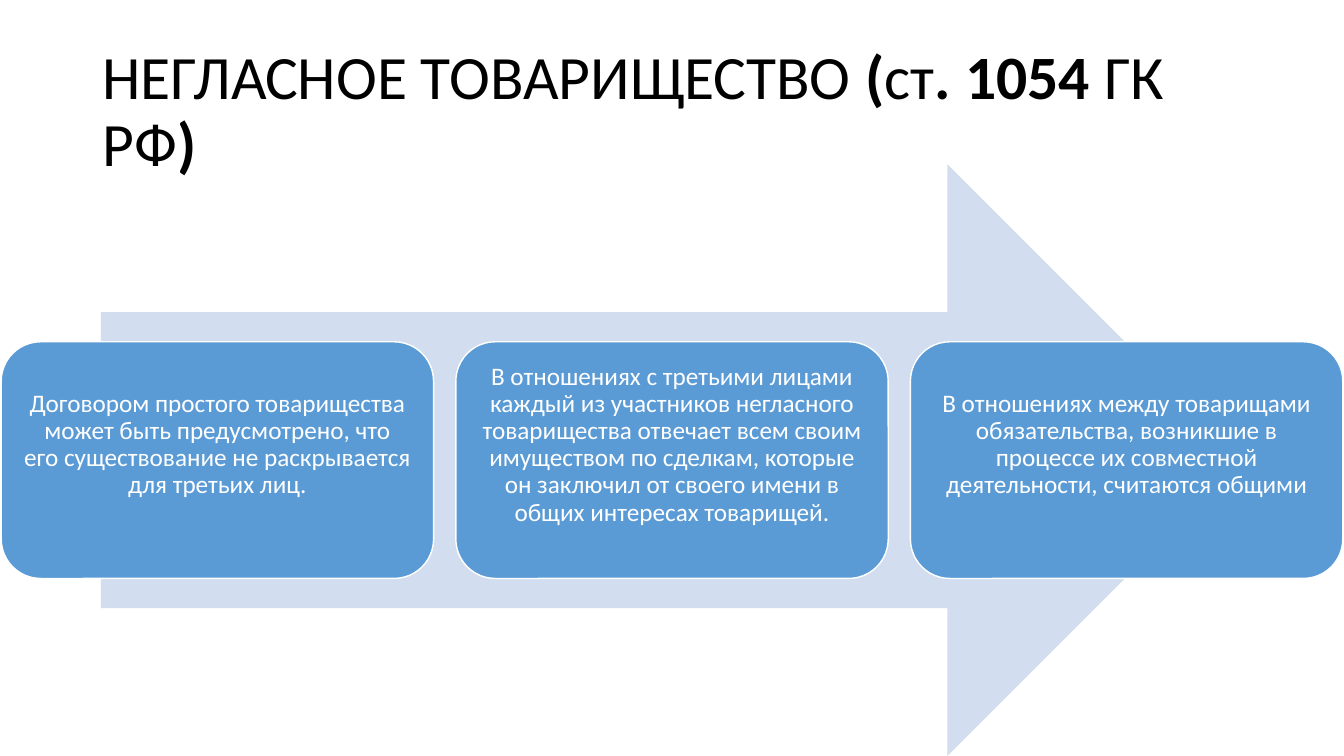
import pptx
import pptx.dml.color
import pptx.enum.shapes
import pptx.enum.text
import pptx.util

Cm = pptx.util.Cm
FONT = "Calibri"
HEADING = [
    ("НЕГЛАСНОЕ ТОВАРИЩЕСТВО ", False),
    ("(", True),
    ("ст", False),
    (". 1054 ", True),
    ("ГК РФ", False),
    (")", True),
]
RULES = [
    ["Договором простого товарищества может быть предусмотрено, что",
     "его существование не раскрывается для третьих лиц."],
    ["В отношениях с третьими лицами каждый из участников негласного",
     "товарищества отвечает всем своим имуществом по сделкам, которые",
     "он заключил от своего имени в общих интересах товарищей."],
    ["В отношениях между товарищами обязательства, возникшие в процессе "
     "их совместной деятельности, считаются общими"],
]


def colour(hex_code):
    """Return the colour for a hex string."""
    return pptx.dml.color.RGBColor.from_string(hex_code)


def add_run(paragraph, text, size, hex_code, bold=False):
    """Add one formatted run to a paragraph."""
    run = paragraph.add_run()
    run.text = text
    run.font.name = FONT
    run.font.size = pptx.util.Pt(size)
    run.font.bold = bold
    run.font.color.rgb = colour(hex_code)


def add_filled(slide, preset, left, top, width, height, hex_code):
    """Add a flat preset shape, measured in centimetres."""
    shape = slide.shapes.add_shape(preset, Cm(left), Cm(top), Cm(width), Cm(height))
    shape.shadow.inherit = False
    shape.fill.solid()
    shape.fill.fore_color.rgb = colour(hex_code)
    shape.line.fill.background()
    return shape


def place_heading(slide, left, top, width, height):
    """Place the title and write its plain and bold parts."""
    heading = slide.shapes.title
    heading.left, heading.top = Cm(left), Cm(top)
    heading.width, heading.height = Cm(width), Cm(height)
    frame = heading.text_frame
    frame.word_wrap = True
    frame.auto_size = pptx.enum.text.MSO_AUTO_SIZE.NONE
    frame.vertical_anchor = pptx.enum.text.MSO_ANCHOR.MIDDLE
    paragraph = frame.paragraphs[0]
    paragraph.alignment = pptx.enum.text.PP_ALIGN.LEFT
    paragraph.line_spacing = 0.9
    paragraph.space_before = pptx.util.Pt(0)
    for text, bold in HEADING:
        add_run(paragraph, text, 44, "000000", bold)


def place_rule(slide, lines, left, top, width, height):
    """Place one rounded box holding a rule of the partnership."""
    rule = add_filled(slide, pptx.enum.shapes.MSO_SHAPE.ROUNDED_RECTANGLE,
                      left, top, width, height, "5B9BD5")
    rule.line.color.rgb = colour("FFFFFF")
    rule.line.width = pptx.util.Pt(1)
    frame = rule.text_frame
    frame.word_wrap = True
    frame.vertical_anchor = pptx.enum.text.MSO_ANCHOR.MIDDLE
    frame.margin_left = frame.margin_right = Cm(0.18)
    frame.margin_top = frame.margin_bottom = Cm(0.18)
    paragraph = frame.paragraphs[0]
    paragraph.alignment = pptx.enum.text.PP_ALIGN.CENTER
    paragraph.line_spacing = 0.9
    paragraph.font.size = pptx.util.Pt(18)
    for line in lines:
        add_run(paragraph, line, 18, "FFFFFF")
        paragraph.add_line_break()


def place_process(slide, left, top, width, height):
    """Place the wide arrow with the row of rules across its middle."""
    inset, gap = 2.51, 0.56
    add_filled(slide, pptx.enum.shapes.MSO_SHAPE.RIGHT_ARROW,
               left + inset, top, width - 2 * inset, height, "D2DEEF")
    rule_width = (width - gap * (len(RULES) - 1)) / len(RULES)
    rule_height = height * 0.4
    for index, lines in enumerate(RULES):
        place_rule(slide, lines, left + index * (rule_width + gap),
                   top + (height - rule_height) / 2, rule_width, rule_height)


def main():
    """Build and save the slide."""
    deck = pptx.Presentation()
    deck.slide_width, deck.slide_height = Cm(33.87), Cm(19.05)
    slide = deck.slides.add_slide(deck.slide_layouts[5])
    place_heading(slide, 2.33, 1.01, 29.21, 3.68)
    place_process(slide, 0.03, 4.14, 33.81, 14.91)
    deck.save("out.pptx")


if __name__ == "__main__":
    main()
